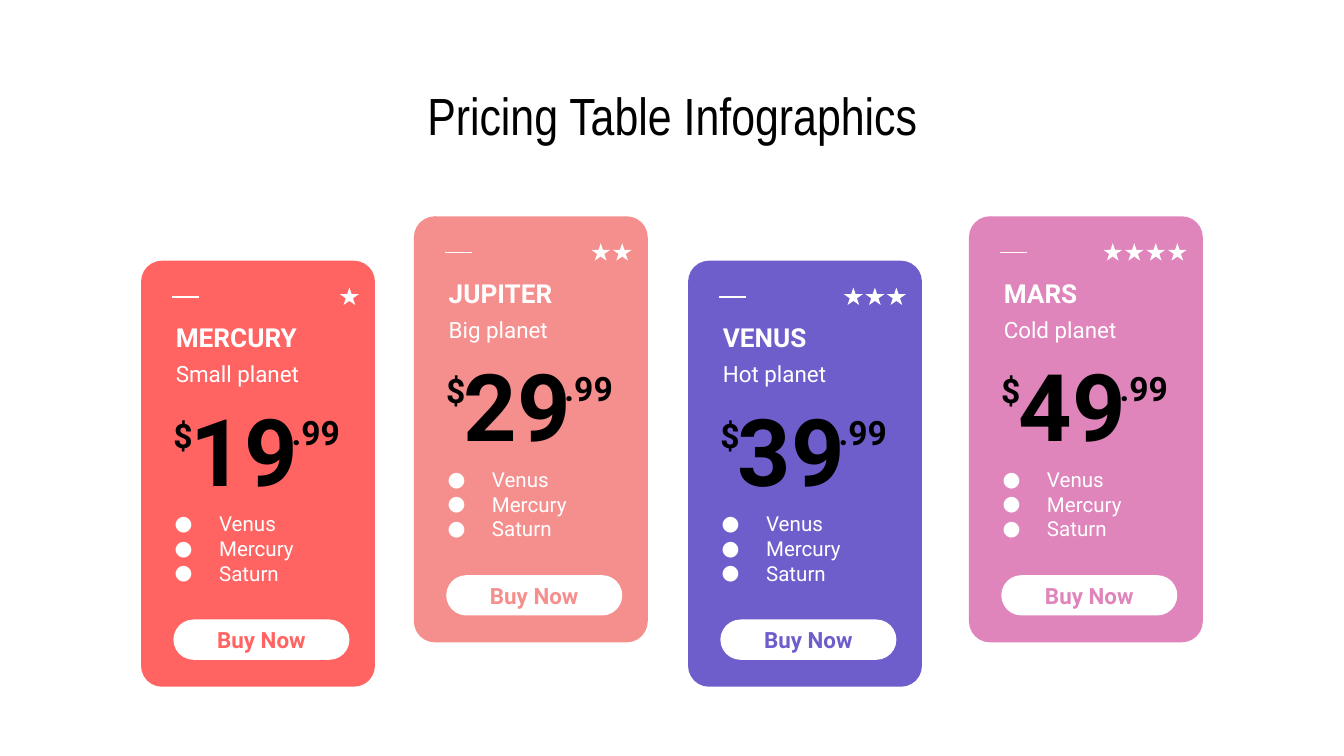
from lxml import etree
from pptx import Presentation
from pptx.dml.color import RGBColor
from pptx.enum import shapes, text
from pptx.oxml import ns
from pptx.util import Inches, Pt

COLORS = {
    "black": "000000", "white": "FFFFFF", "coral": "FF6462",
    "salmon": "F58F8E", "violet": "6E5ECC", "pink": "DF85BB",
}
TITLE = "Pricing Table Infographics"
PLANS = [
    ("MERCURY", "Small planet", "19", "coral"),
    ("JUPITER", "Big planet", "29", "salmon"),
    ("VENUS", "Hot planet", "39", "violet"),
    ("MARS", "Cold planet", "49", "pink"),
]
FEATURES = ["Venus", "Mercury", "Saturn"]
CARD_LEFTS = [1.05, 3.08, 5.12, 7.21]
CARD_TOPS = [1.94, 1.61]
CARD_W, CARD_H = 1.74, 3.17
STAR_LEFT, STAR_PITCH = 1.48, 0.16

SHAPE = shapes.MSO_SHAPE
LEFT, CENTER = text.PP_ALIGN.LEFT, text.PP_ALIGN.CENTER
BODY_FONT = "Roboto"
PAD = 0.1


def rgb(name):
    return RGBColor.from_string(COLORS[name])


def write(sp, lines, size, color, bold=False, font=BODY_FONT, align=LEFT,
          pads=(PAD, PAD), spacing=1.0, bullets=False):
    tf = sp.text_frame
    frame_format = {
        "word_wrap": True, "vertical_anchor": text.MSO_ANCHOR.MIDDLE,
        "margin_left": Inches(pads[0]), "margin_right": Inches(pads[1]),
        "margin_top": Inches(PAD), "margin_bottom": Inches(PAD),
    }
    for key, value in frame_format.items():
        setattr(tf, key, value)
    for i, line in enumerate(lines):
        p = tf.add_paragraph() if i else tf.paragraphs[0]
        p.alignment, p.line_spacing = align, spacing
        r = p.add_run()
        r.text = line
        for key, value in {"name": font, "size": Pt(size), "bold": bold}.items():
            setattr(r.font, key, value)
        r.font.color.rgb = rgb(color)
        if bullets:
            add_bullet(p, color)


def add_bullet(p, color):
    pPr = p._p.get_or_add_pPr()
    pPr.set("marL", str(Inches(0.5)))
    pPr.set("indent", str(Inches(-0.33)))
    buClr = etree.SubElement(pPr, ns.qn("a:buClr"))
    etree.SubElement(buClr, ns.qn("a:srgbClr"), val=COLORS[color])
    etree.SubElement(pPr, ns.qn("a:buFont"), typeface=BODY_FONT)
    etree.SubElement(pPr, ns.qn("a:buChar"), char="●")


def add_text(s, box, lines, size, color, **style):
    sp = s.shapes.add_textbox(*map(Inches, box))
    write(sp, lines, size, color, **style)


def add_filled(s, kind, box, color, corner=None):
    sp = s.shapes.add_shape(kind, *map(Inches, box))
    sp.shadow.inherit = False
    sp.fill.solid()
    sp.fill.fore_color.rgb = rgb(color)
    sp.line.fill.background()
    if corner is not None:
        sp.adjustments[0] = corner
    return sp


def add_dash(s, x, y, width):
    line = s.shapes.add_connector(
        shapes.MSO_CONNECTOR.STRAIGHT, *map(Inches, (x, y, x + width, y)))
    line.line.color.rgb = rgb("white")
    line.line.width = Pt(0.72)
    etree.SubElement(line._element.spPr, ns.qn("a:effectLst"))


def add_card(s, x, y, stars, name, tagline, price, color):
    def at(dx, dy, w, h):
        return x + dx, y + dy, w, h

    add_filled(s, SHAPE.ROUNDED_RECTANGLE, at(0, 0, CARD_W, CARD_H), color, 0.09)
    for i in range(stars):
        add_filled(s, SHAPE.STAR_5_POINT,
                   at(STAR_LEFT - i * STAR_PITCH, 0.2, 0.14, 0.13), "white")
    button = add_filled(s, SHAPE.ROUNDED_RECTANGLE,
                        at(0.24, 2.67, 1.31, 0.3), "white", 0.5)
    write(button, ["Buy Now"], 12, color, bold=True, align=CENTER)
    add_dash(s, x + 0.23, y + 0.27, 0.2)
    add_text(s, at(0.35, 1.13, 0.84, 0.54), [price], 50, "black",
             bold=True, align=CENTER, pads=(0, 0))
    add_text(s, at(0.16, 0.65, 1.42, 0.35), [tagline], 12, "white", spacing=1.15)
    add_text(s, at(0.16, 0.34, 1.42, 0.42), [name], 14, "white",
             bold=True, spacing=1.15)
    add_text(s, at(0.24, 1.07, 0.2, 0.45), ["$"], 18, "black",
             bold=True, pads=(0, PAD))
    add_text(s, at(1.12, 1.05, 0.38, 0.45), [".99"], 18, "black",
             bold=True, pads=(0, 0))
    add_text(s, at(0.08, 1.75, 1.35, 0.78), FEATURES, 11, "white",
             pads=(0, PAD), bullets=True)


def main():
    prs = Presentation()
    prs.slide_width = Inches(10)
    prs.slide_height = prs.slide_width * 9 // 16
    s = prs.slides.add_slide(prs.slide_layouts[6])
    add_text(s, (2.56, 0.59, 4.88, 0.53), [TITLE], 28, "black",
             font="Arial Narrow", align=CENTER)
    for i, (x, plan) in enumerate(zip(CARD_LEFTS, PLANS)):
        add_card(s, x, CARD_TOPS[i % 2], i + 1, *plan)
    prs.save("out.pptx")


if __name__ == "__main__":
    main()
